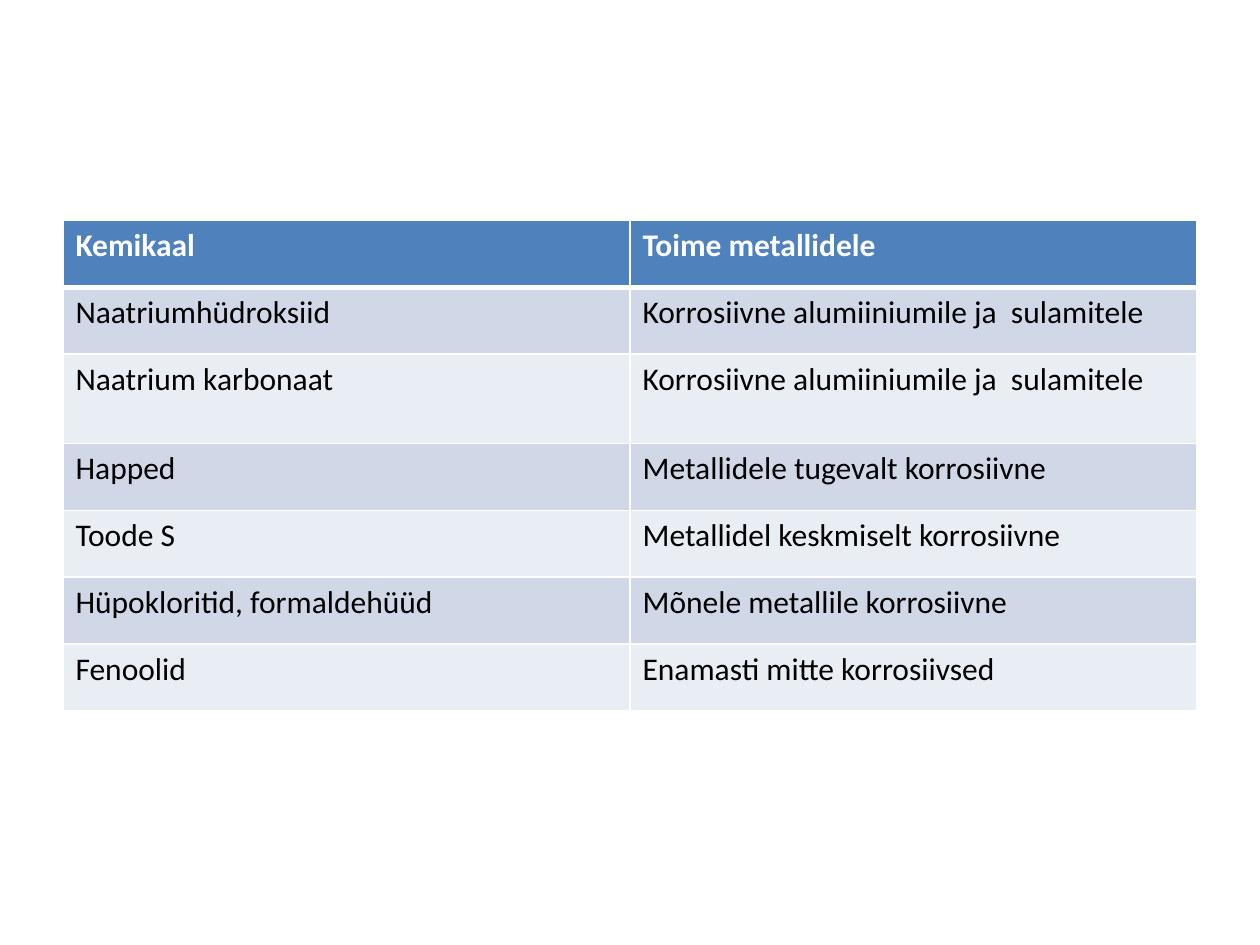
from dataclasses import dataclass

from lxml import etree
from pptx import Presentation
from pptx.dml.color import RGBColor
from pptx.enum.text import MSO_ANCHOR
from pptx.oxml.ns import qn
from pptx.util import Inches, Pt

TOP = MSO_ANCHOR.TOP
ROWS = [
    ("Kemikaal", "Toime metallidele"),
    ("Naatriumhüdroksiid", "Korrosiivne alumiiniumile ja  sulamitele"),
    ("Naatrium karbonaat", "Korrosiivne alumiiniumile ja  sulamitele"),
    ("Happed", "Metallidele tugevalt korrosiivne"),
    ("Toode S", "Metallidel keskmiselt korrosiivne"),
    ("Hüpokloritid, formaldehüüd", "Mõnele metallile korrosiivne"),
    ("Fenoolid", "Enamasti mitte korrosiivsed"),
]
TALL = 2  # row with extra height


@dataclass(frozen=True)
class Theme:
    font: str = "Calibri"
    size: int = 18
    head: str = "4F81BD"
    bands: tuple = ("E9EDF4", "D0D8E8")
    light: str = "FFFFFF"
    dark: str = "000000"
    thin: int = 1
    thick: int = 3


class Deck:
    def __init__(self, theme):
        self.theme = theme
        self.prs = Presentation()
        self.prs.slide_width, self.prs.slide_height = Inches(10), Inches(7.5)
        self.slide = self.prs.slides.add_slide(self.prs.slide_layouts[6])

    def table(self, left, top, width, row, tall, data):
        """Place a table; left and width are shares of the slide's width,
        top, row and tall are shares of its height."""
        wide, high = self.prs.slide_width, self.prs.slide_height
        sizes = [int(high * (tall if i == TALL else row)) for i in range(len(data))]
        frame = self.slide.shapes.add_table(
            len(data), len(data[0]), int(wide * left), int(high * top),
            int(wide * width), sum(sizes))
        for line, size in zip(frame.table.rows, sizes):
            line.height = size
        for r, texts in enumerate(data):
            for c, text in enumerate(texts):
                self.cell(frame.table.cell(r, c), text, r)

    def cell(self, cell, text, row):
        look, head = self.theme, row == 0
        cell.text = text
        cell.vertical_anchor = TOP
        cell.fill.solid()
        fill = look.head if head else look.bands[row % 2]
        cell.fill.fore_color.rgb = RGBColor.from_string(fill)
        font = cell.text_frame.paragraphs[0].runs[0].font
        style = {"name": look.font, "size": Pt(look.size), "bold": head}
        for key, value in style.items():
            setattr(font, key, value)
        font.color.rgb = RGBColor.from_string(look.light if head else look.dark)
        self.edges(cell, {
            "lnL": look.thin, "lnR": look.thin,
            "lnT": look.thick if row == 1 else look.thin,
            "lnB": look.thick if head else look.thin})

    def edges(self, cell, widths):
        """Draw the cell's borders, which must stand before its fill."""
        props = cell._tc.get_or_add_tcPr()
        for i, (side, width) in enumerate(widths.items()):
            line = etree.Element(qn(f"a:{side}"), w=str(Pt(width)))
            fill = etree.SubElement(line, qn("a:solidFill"))
            etree.SubElement(fill, qn("a:srgbClr"), val=self.theme.light)
            props.insert(i, line)


def main():
    deck = Deck(Theme())
    deck.table(0.05, 1.75 / 7.5, 0.9, 0.53 / 7.5, 0.71 / 7.5, ROWS)
    deck.prs.save("out.pptx")


if __name__ == "__main__":
    main()
